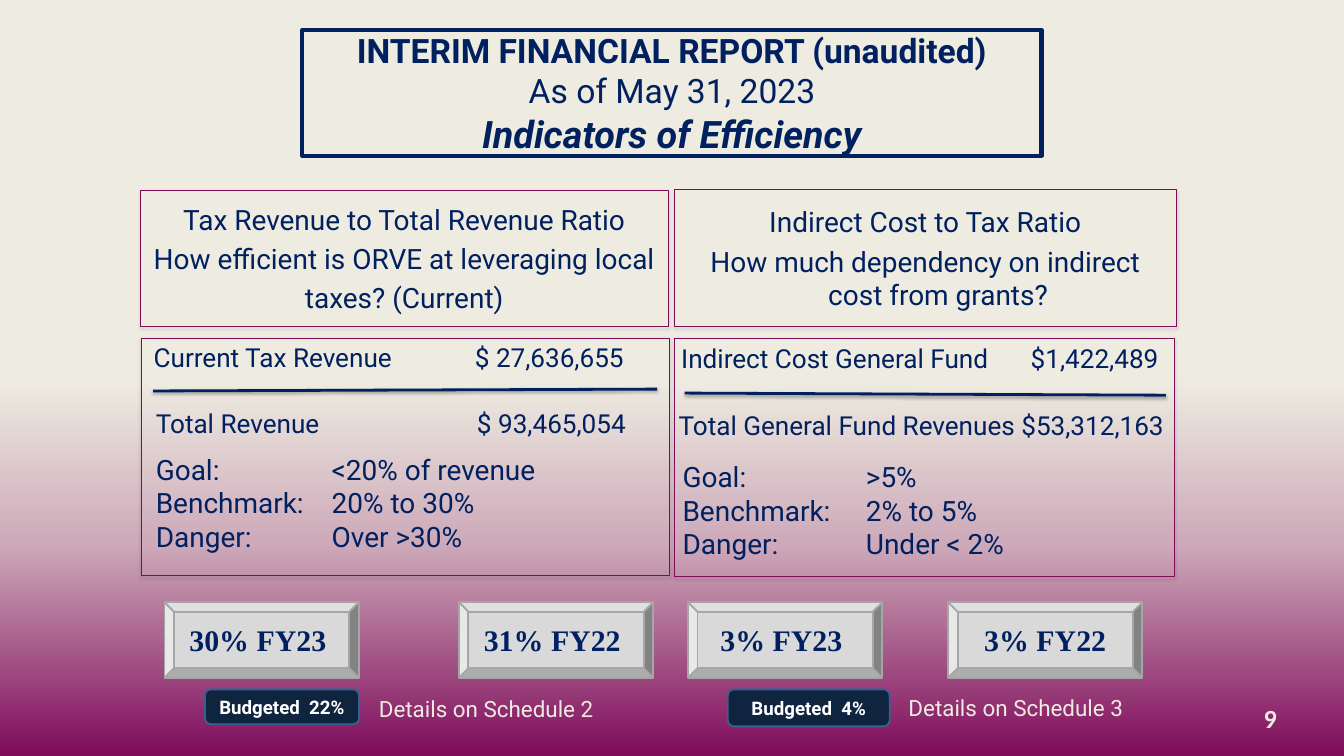
"""Build the indicators of efficiency slide of an interim financial report."""
import copy
from dataclasses import dataclass

import lxml.etree
import pptx
import pptx.dml.color
import pptx.enum.shapes
import pptx.enum.text
import pptx.oxml.ns
import pptx.util

Cm = pptx.util.Cm
Pt = pptx.util.Pt
Shape = pptx.enum.shapes.MSO_SHAPE
Align = pptx.enum.text.PP_ALIGN
Anchor = pptx.enum.text.MSO_ANCHOR
qn = pptx.oxml.ns.qn


@dataclass(frozen=True)
class Theme:
    navy: str = "002060"
    cream: str = "EEECE1"
    plum: str = "7F0B5B"
    rose: str = "CDA9B9"
    white: str = "FFFFFF"
    button: str = "D9D9D9"
    button_edge: str = "A6A6A6"
    badge: str = "0F243E"
    badge_edge: str = "376092"
    shadow: str = "000000"
    font: str = "Roboto"
    button_font: str = "Times New Roman"
    number_font: str = "Calibri"
    title_size: float = 36
    subtitle_size: float = 40.5
    button_size: float = 32
    heading_size: float = 30
    figure_size: float = 28
    note_size: float = 24
    badge_size: float = 20


class SlideBuilder:
    def __init__(self, slide, theme):
        self.slide = slide
        self.theme = theme

    def color(self, value):
        return pptx.dml.color.RGBColor.from_string(value)

    def background(self):
        fill = self.slide.background.fill
        fill.gradient()
        fill.gradient_angle = 270
        stop_list = self.slide._element.find(".//" + qn("a:gsLst"))
        stop_list.append(copy.deepcopy(stop_list[-1]))
        colors = (self.theme.cream, self.theme.rose, self.theme.plum)
        for stop, position, value in zip(fill.gradient_stops, (0.5, 0.72, 1), colors):
            stop.position = position
            stop.color.rgb = self.color(value)

    def shadow(self, shape):
        effects = lxml.etree.SubElement(shape._element.spPr, qn("a:effectLst"))
        outer = lxml.etree.SubElement(effects, qn("a:outerShdw"), blurRad="40000",
                                      dist="23000", dir="5400000", rotWithShape="0")
        color = lxml.etree.SubElement(outer, qn("a:srgbClr"), val=self.theme.shadow)
        lxml.etree.SubElement(color, qn("a:alpha"), val="35000")

    def run(self, paragraph, text, size, color=None, font=None, bold=False, italic=False):
        run = paragraph.add_run()
        run.text = text
        run.font.size = Pt(size)
        run.font.name = font or self.theme.font
        run.font.bold = bold
        run.font.italic = italic
        run.font.color.rgb = self.color(color or self.theme.navy)

    def add_lines(self, shape, lines, size, align=Align.LEFT, anchor=Anchor.TOP,
                  before=0, hanging=0, tab=None, **style):
        frame = shape.text_frame
        frame.word_wrap = True
        frame.vertical_anchor = anchor
        for index, line in enumerate(lines):
            paragraph = frame.add_paragraph() if index else frame.paragraphs[0]
            paragraph.alignment = align
            paragraph.space_before = Pt(before)
            properties = paragraph._p.get_or_add_pPr()
            if hanging:
                properties.set("marL", str(Cm(hanging)))
                properties.set("indent", str(-Cm(hanging)))
            if tab:
                tabs = lxml.etree.SubElement(properties, qn("a:tabLst"))
                lxml.etree.SubElement(tabs, qn("a:tab"), pos=str(Cm(tab)), algn="l")
            self.run(paragraph, line, size, **style)

    def box(self, kind, area, edge, width, fill=None):
        shape = self.slide.shapes.add_shape(kind, *map(Cm, area))
        shape.line.color.rgb = self.color(edge)
        shape.line.width = Pt(width)
        if fill:
            shape.fill.solid()
            shape.fill.fore_color.rgb = self.color(fill)
        return shape

    def no_margins(self, frame):
        frame.margin_left = frame.margin_right = frame.margin_top = frame.margin_bottom = 0

    def title(self, area, report, date, subject):
        shape = self.box(Shape.RECTANGLE, area, self.theme.navy, 4.5)
        shape.fill.background()
        shape.shadow.inherit = False
        frame = shape.text_frame
        self.no_margins(frame)
        frame.word_wrap = True
        frame.vertical_anchor = Anchor.MIDDLE
        paragraph = frame.paragraphs[0]
        paragraph.alignment = Align.CENTER
        self.run(paragraph, report, self.theme.title_size, bold=True)
        paragraph.add_line_break()
        self.run(paragraph, date, self.theme.title_size)
        paragraph.add_line_break()
        self.run(paragraph, subject, self.theme.subtitle_size, bold=True, italic=True)

    def panel(self, area):
        shape = self.box(Shape.RECTANGLE, area, self.theme.plum, 0.75)
        shape._element.set("useBgFill", "1")
        self.shadow(shape)
        return shape

    def heading(self, area, lines):
        self.add_lines(self.panel(area), lines, self.theme.heading_size, Align.CENTER,
                       Anchor.MIDDLE, before=6, hanging=0.97)

    def figures(self, area, line, tab, margin, before):
        shape = self.panel(area)
        shape.text_frame.margin_left = Cm(margin)
        self.add_lines(shape, [line], self.theme.figure_size, before=before, tab=tab)

    def button(self, left, text):
        shape = self.box(Shape.BEVEL, (left, 22.77, 7.34, 2.85),
                         self.theme.button_edge, 2, self.theme.button)
        shape.shadow.inherit = False
        self.add_lines(shape, [text], self.theme.button_size, Align.CENTER, Anchor.MIDDLE,
                       font=self.theme.button_font, bold=True)

    def badge(self, area, text):
        shape = self.box(Shape.ROUNDED_RECTANGLE, area, self.theme.badge_edge, 2, self.theme.badge)
        shape.shadow.inherit = False
        self.add_lines(shape, [text], self.theme.badge_size, Align.CENTER, Anchor.MIDDLE,
                       color=self.theme.white, bold=True)

    def text(self, area, lines, size, **style):
        shape = self.slide.shapes.add_textbox(*map(Cm, area))
        self.add_lines(shape, lines, size, **style)
        return shape

    def fraction_line(self, ends):
        kind = pptx.enum.shapes.MSO_CONNECTOR.STRAIGHT
        connector = self.slide.shapes.add_connector(kind, *map(Cm, ends))
        connector.line.color.rgb = self.color(self.theme.navy)
        connector.line.width = Pt(3)
        self.shadow(connector)


def main():
    presentation = pptx.Presentation()
    presentation.slide_width = Cm(50.8)
    presentation.slide_height = Cm(28.58)
    theme = Theme()
    builder = SlideBuilder(presentation.slides.add_slide(presentation.slide_layouts[6]), theme)
    builder.background()
    builder.title((11.43, 1.14, 27.94, 4.75), "INTERIM FINANCIAL REPORT (unaudited)",
                  "As of May 31, 2023", "Indicators of Efficiency")
    builder.heading((5.31, 7.18, 19.94, 5.16), [
        "Tax Revenue to Total Revenue Ratio",
        "How efficient is ORVE at leveraging local",
        "taxes? (Current)"])
    builder.heading((25.5, 7.17, 18.95, 5.18), [
        "Indirect Cost to Tax Ratio",
        "How much dependency on indirect cost from grants?"])
    builder.figures((5.33, 12.78, 19.96, 8.99), "Current Tax Revenue\t$ 27,636,655", 12.14, 0.48, 5.6)
    builder.figures((25.5, 12.8, 18.9, 8.99), "Indirect Cost General Fund\t$1,422,489", 13.21, 0.25, 0)
    for left, text in ((6.22, "30% FY23 "), (17.35, "31% FY22 "),
                       (26.01, "3% FY23 "), (35.84, "3% FY22")):
        builder.button(left, text)
    builder.badge((7.75, 26.06, 5.82, 1.32), "Budgeted  22%")
    builder.badge((27.51, 26.06, 6.12, 1.4), "Budgeted  4%")
    for area, text in (((14.07, 26.16, 8.84, 1.27), "Details on Schedule 2"),
                       ((34.09, 26.11, 9.73, 1.27), "Details on Schedule 3")):
        builder.text(area, [text], theme.note_size, color=theme.cream)
    builder.fraction_line((5.79, 14.78, 24.84, 14.71))
    builder.fraction_line((25.88, 14.86, 44.07, 14.94))
    for area, tab, limits in (
            ((5.64, 16.97, 19.99, 4.11), 6.65, ("<20% of revenue", "20% to 30%", "Over >30%")),
            ((25.55, 17.25, 18.95, 4.11), 6.93, (">5%", "2% to 5%", "Under < 2%"))):
        lines = [f"{label}:\t{limit}" for label, limit in zip(("Goal", "Benchmark", "Danger"), limits)]
        builder.text(area, lines, theme.heading_size, tab=tab)
    builder.text((25.4, 15.37, 19.48, 1.45), ["Total General Fund Revenues $53,312,163"], theme.figure_size)
    builder.text((5.64, 15.29, 19.28, 1.45), ["Total Revenue\t$ 93,465,054"], theme.figure_size, tab=12.14)
    number = builder.text((47.19, 26.57, 1.07, 1.19), ["9"], theme.figure_size, align=Align.RIGHT,
                          color=theme.cream, font=theme.number_font, bold=True)
    builder.no_margins(number.text_frame)
    presentation.save("out.pptx")


if __name__ == "__main__":
    main()
